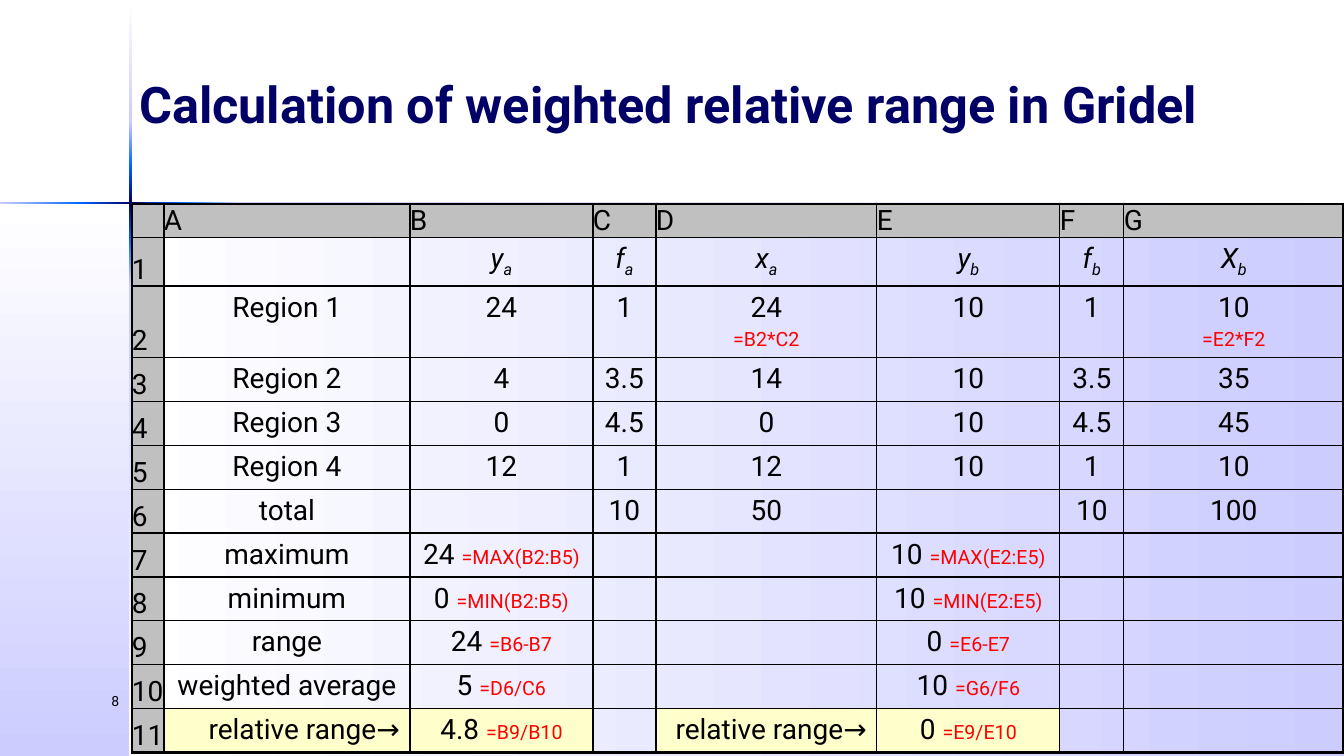
from itertools import pairwise

from lxml.etree import SubElement
from pptx import Presentation
from pptx.dml.color import RGBColor
from pptx.enum.shapes import MSO_SHAPE
from pptx.enum.text import MSO_ANCHOR, MSO_AUTO_SIZE, PP_ALIGN
from pptx.oxml.ns import qn
from pptx.util import Pt

SCALE = 914400 / 100.8
FACE = "Roboto"
HUES = {
    "white": "FFFFFF", "pale": "CCCCFF", "blue": "0066FF", "navy": "000066",
    "black": "000000", "red": "FF0000", "gray": "C0C0C0", "cream": "FFFFCC",
}
COLS = [32, 246, 183, 63, 221, 183, 64, 220]
ROWS = [33, 43, 71] + [44, 44, 43] * 3
CELLS = [
    ["", "A", "B", "C", "D", "E", "F", "G"],
    ["1", "", "y_a", "f_a", "x_a", "y_b", "f_b", "X_b"],
    ["2", "Region 1", "24", "1", "24\n=B2*C2", "10", "1", "10\n=E2*F2"],
    ["3", "Region 2", "4", "3.5", "14", "10", "3.5", "35"],
    ["4", "Region 3", "0", "4.5", "0", "10", "4.5", "45"],
    ["5", "Region 4", "12", "1", "12", "10", "1", "10"],
    ["6", "total", "", "10", "50", "", "10", "100"],
    ["7", "maximum", "24 =MAX(B2:B5)", "", "", "10 =MAX(E2:E5)", "", ""],
    ["8", "minimum", "0 =MIN(B2:B5)", "", "", "10 =MIN(E2:E5)", "", ""],
    ["9", "range", "24 =B6-B7", "", "", "0 =E6-E7", "", ""],
    ["10", "weighted average", "5 =D6/C6", "", "", "10 =G6/F6", "", ""],
    ["11", "relative range→", "4.8 =B9/B10", "", "relative range→", "0 =E9/E10", "", ""],
]


def px(num):
    return round(num * SCALE)


def tint(name):
    return RGBColor.from_string(HUES[name])


def style(font, size, hue="black"):
    font.name = FACE
    font.size = Pt(size)
    font.color.rgb = tint(hue)


def blend(slide, box, hues, down):
    shape = slide.shapes.add_shape(MSO_SHAPE.RECTANGLE, *map(px, box))
    shape.shadow.inherit = False
    shape.line.fill.background()
    shape.fill.gradient()
    shape.fill.gradient_angle = 270 if down else 0
    for stop, hue, spot in zip(shape.fill.gradient_stops, hues, (0, 1)):
        stop.color.rgb = tint(hue)
        stop.position = spot


def backdrop(slide, box):
    left, top, width, height = box
    right, base = left + width, top + height
    x, y = left + 130, top + 203
    blend(slide, (x, y, right - x, base - y), ("white", "pale"), False)
    blend(slide, (left, y, x - left, base - y), ("white", "pale"), True)
    across = [(left, "pale"), (left + 81, "blue"), (x, "navy"), (x + 49, "blue"),
              (x + 108, "pale"), (right, "white")]
    down = [(top + 1, "white"), (top + 122, "pale"), (top + 166, "blue"), (y, "navy"),
            (y + 37, "blue"), (y + 81, "pale"), (base, "white")]
    for (start, first), (end, last) in pairwise(across):
        blend(slide, (start, y - 1, end - start, 2), (first, last), False)
    for (start, first), (end, last) in pairwise(down):
        blend(slide, (x - 1, start, 3, end - start), (first, last), True)


def heading(slide, box, text):
    title = slide.shapes.title
    title.left, title.top, title.width, title.height = map(px, box)
    frame = title.text_frame
    frame.text = text
    frame.word_wrap = True
    frame.auto_size = MSO_AUTO_SIZE.NONE
    frame.vertical_anchor = MSO_ANCHOR.BOTTOM
    frame.margin_bottom = px(69)
    para = frame.paragraphs[0]
    para.alignment = PP_ALIGN.LEFT
    style(para.font, 36, "navy")
    para.font.bold = True


def number(slide, box, text):
    frame = slide.shapes.add_textbox(*map(px, box)).text_frame
    frame.word_wrap = True
    para = frame.paragraphs[0]
    para.text = text
    para.alignment = PP_ALIGN.RIGHT
    style(para.font, 10)


def edge(cell, sides):
    props = cell._tc.get_or_add_tcPr()
    for spot, (side, width) in enumerate(sides.items()):
        line = SubElement(props, qn(f"a:{side}"), w=str(Pt(width)))
        fill = SubElement(line, qn("a:solidFill"))
        SubElement(fill, qn("a:srgbClr"), val=HUES["black"])
        props.remove(line)
        props.insert(spot, line)


def write(cell, text, align):
    frame = cell.text_frame
    for index, line in enumerate(text.split("\n")):
        para = frame.add_paragraph() if index else frame.paragraphs[0]
        para.alignment = align
        style(para.font, 20)
        if index:
            para.space_before = Pt(3)
        plain, mark, tail = line.partition("_" if "_" in line else "=")
        if plain:
            para.add_run().text = plain
        if mark == "_":
            para.font.italic = True
            run = para.add_run()
            run.text = tail
            run._r.get_or_add_rPr().set("baseline", "-25000")
        elif mark:
            run = para.add_run()
            run.text = mark + tail
            style((run if plain else para).font, 14, "red")


def grid(slide, box):
    table = slide.shapes.add_table(len(ROWS), len(COLS), *map(px, box)).table
    table.first_row = table.horz_banding = False
    for col, width in zip(table.columns, COLS):
        col.width = px(width)
    for row, height in zip(table.rows, ROWS):
        row.height = px(height)
    end, far = len(ROWS) - 1, len(COLS) - 1
    for r, texts in enumerate(CELLS):
        for c, text in enumerate(texts):
            cell = table.cell(r, c)
            align = PP_ALIGN.CENTER
            hue = None
            if r == 0 or c == 0:
                hue, align = "gray", PP_ALIGN.LEFT
                cell.margin_left = cell.margin_right = 0
                cell.margin_top = cell.margin_bottom = 0
                cell.vertical_anchor = MSO_ANCHOR.BOTTOM if r else MSO_ANCHOR.MIDDLE
            elif r == end and text:
                hue = "cream"
                if text.endswith("→"):
                    align = PP_ALIGN.RIGHT
            if hue:
                cell.fill.solid()
                cell.fill.fore_color.rgb = tint(hue)
            else:
                cell.fill.background()
            outer = {"lnL": c == 0, "lnR": c == far, "lnT": r == 0, "lnB": r == end}
            edge(cell, {side: 2.25 if rim else 1 for side, rim in outer.items()})
            write(cell, text, align)


def main():
    deck = Presentation()
    deck.slide_width, deck.slide_height = px(1344), px(756)
    slide = deck.slides.add_slide(deck.slide_layouts[5])
    backdrop(slide, (0, 0, 1344, 756))
    number(slide, (0, 688, 129, 50), "8")
    heading(slide, (129, 0, 1215, 203), "Calculation of weighted relative range in Gridel")
    grid(slide, (132, 204, sum(COLS), sum(ROWS)))
    deck.save("out.pptx")


if __name__ == "__main__":
    main()
